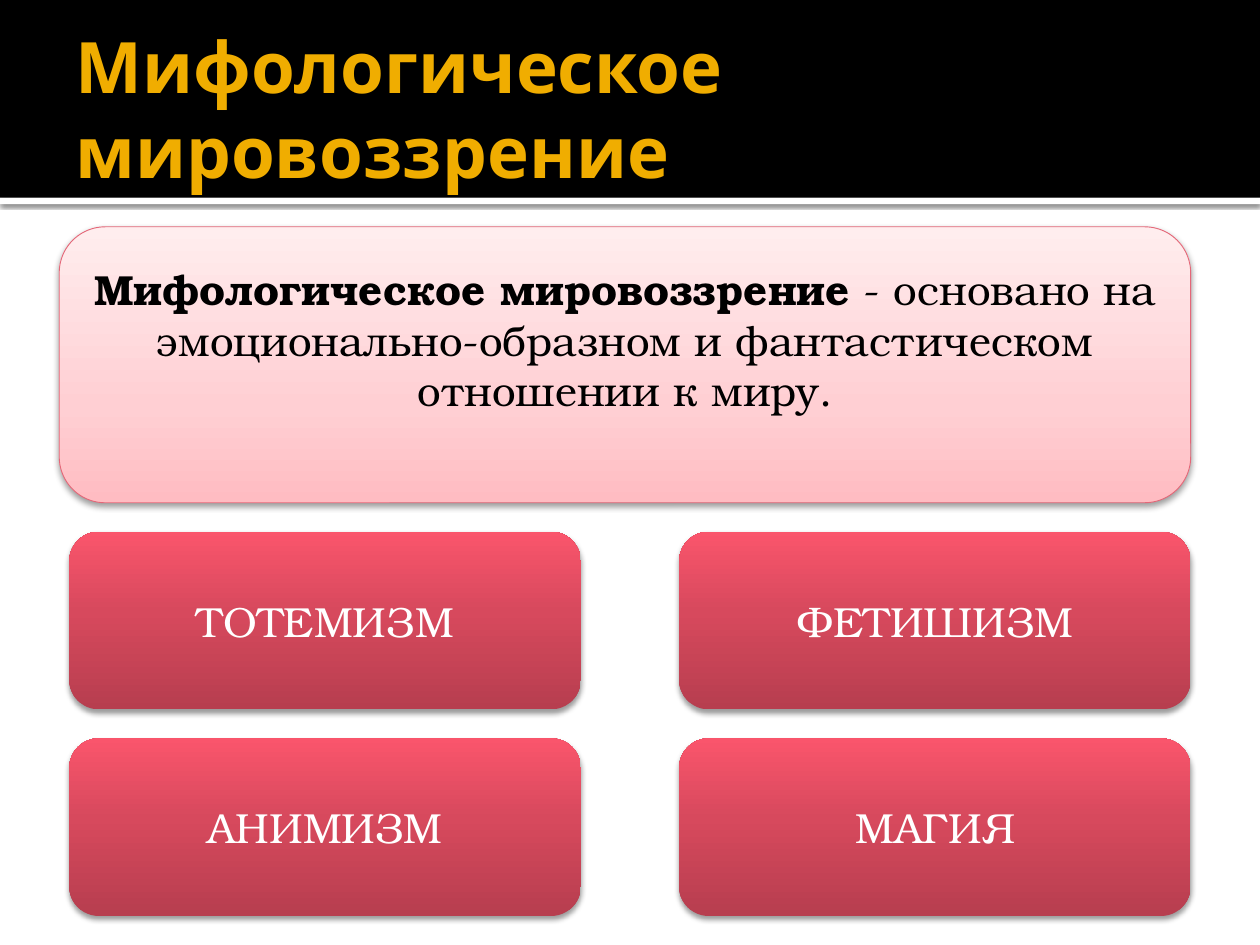
"""Builds a slide on the mythological worldview and its four forms."""
from lxml.etree import SubElement
from pptx import Presentation
from pptx.dml.color import RGBColor
from pptx.enum.shapes import MSO_SHAPE
from pptx.enum.text import MSO_ANCHOR, PP_ALIGN
from pptx.oxml.ns import qn
from pptx.util import Inches, Pt

THEME = {
    "black": "000000", "white": "FFFFFF", "gold": "F0AD00", "outline": "E46778",
    "panel": [(0, "FFBCC2"), (35, "FFCFD3"), (100, "FFEDEE")],
    "card": [(0, "B73E4F"), (55, "D7495D"), (100, "FA556C")],
    "title_font": "Cabin", "body_font": "TeX Gyre Bonum",
    "title_size": 40.5, "body_size": 24,
}


def add_box(kind, box, fill, line=None, shadow=None):
    s = slide.shapes.add_shape(kind, *[Inches(v) for v in box])
    s.shadow.inherit = False
    spPr = s._element.spPr
    if isinstance(fill, str):
        s.fill.solid()
        s.fill.fore_color.rgb = RGBColor.from_string(fill)
    else:
        s.fill.gradient()
        s.fill.gradient_angle = 90
        stops = spPr.find(".//" + qn("a:gsLst"))
        stops.clear()
        for pos, color in fill:
            gs = SubElement(stops, qn("a:gs"), pos=str(pos * 1000))
            SubElement(gs, qn("a:srgbClr"), val=color)
    if line:
        s.line.color.rgb = RGBColor.from_string(line)
        s.line.width = Pt(0.5)
    else:
        s.line.fill.background()
    if shadow:
        alpha, blur, dist = shadow
        outer = SubElement(spPr.find(qn("a:effectLst")), qn("a:outerShdw"),
                           blurRad=str(Pt(blur)), dist=str(Pt(dist)),
                           dir="5400000", algn="ctr", rotWithShape="0")
        clr = SubElement(outer, qn("a:srgbClr"), val=THEME["black"])
        SubElement(clr, qn("a:alpha"), val=str(alpha * 1000))
    return s


def write(s, runs, font, size, color, align, **frame):
    tf = s.text_frame
    frame = {"word_wrap": True, "vertical_anchor": MSO_ANCHOR.MIDDLE, **frame}
    for name, value in frame.items():
        setattr(tf, name, value)
    p = tf.paragraphs[0]
    p.alignment = align
    for text, bold in runs:
        r = p.add_run()
        r.text = text
        for name, value in {"name": font, "size": Pt(size), "bold": bold}.items():
            setattr(r.font, name, value)
        r.font.color.rgb = RGBColor.from_string(color)


prs = Presentation()
prs.slide_width, prs.slide_height = Inches(10), Inches(7.5)
slide = prs.slides.add_slide(prs.slide_layouts[6])

add_box(MSO_SHAPE.RECTANGLE, (0, 1.57, 10, 0.05), THEME["white"], shadow=(60, 2.5, 0.8))
add_box(MSO_SHAPE.RECTANGLE, (0, 0, 10, 1.57), THEME["black"])

title = slide.shapes.add_textbox(Inches(0.5), Inches(0.17), Inches(9), Inches(1.37))
write(title, [("Мифологическое мировоззрение", True)], THEME["title_font"],
      THEME["title_size"], THEME["gold"], PP_ALIGN.LEFT, margin_right=Inches(0.05))

panel = add_box(MSO_SHAPE.ROUNDED_RECTANGLE, (0.47, 1.8, 8.98, 2.19),
                THEME["panel"], THEME["outline"], (38, 3.5, 2))
write(panel, [("Мифологическое мировоззрение", True),
              (" - основано на эмоционально-образном и фантастическом отношении к миру.", False)],
      THEME["body_font"], THEME["body_size"], THEME["black"], PP_ALIGN.CENTER,
      margin_bottom=Inches(0.45))

forms = [["ТОТЕМИЗМ", "ФЕТИШИЗМ"], ["АНИМИЗМ", "МАГИЯ"]]
for row, names in enumerate(forms):
    for col, name in enumerate(names):
        card = add_box(MSO_SHAPE.ROUNDED_RECTANGLE,
                       (0.55 + 4.84 * col, 4.22 + 1.64 * row, 4.06, 1.41),
                       THEME["card"], shadow=(38, 3.1, 2))
        write(card, [(name, False)], THEME["body_font"], THEME["body_size"],
              THEME["white"], PP_ALIGN.CENTER)

prs.save("out.pptx")
